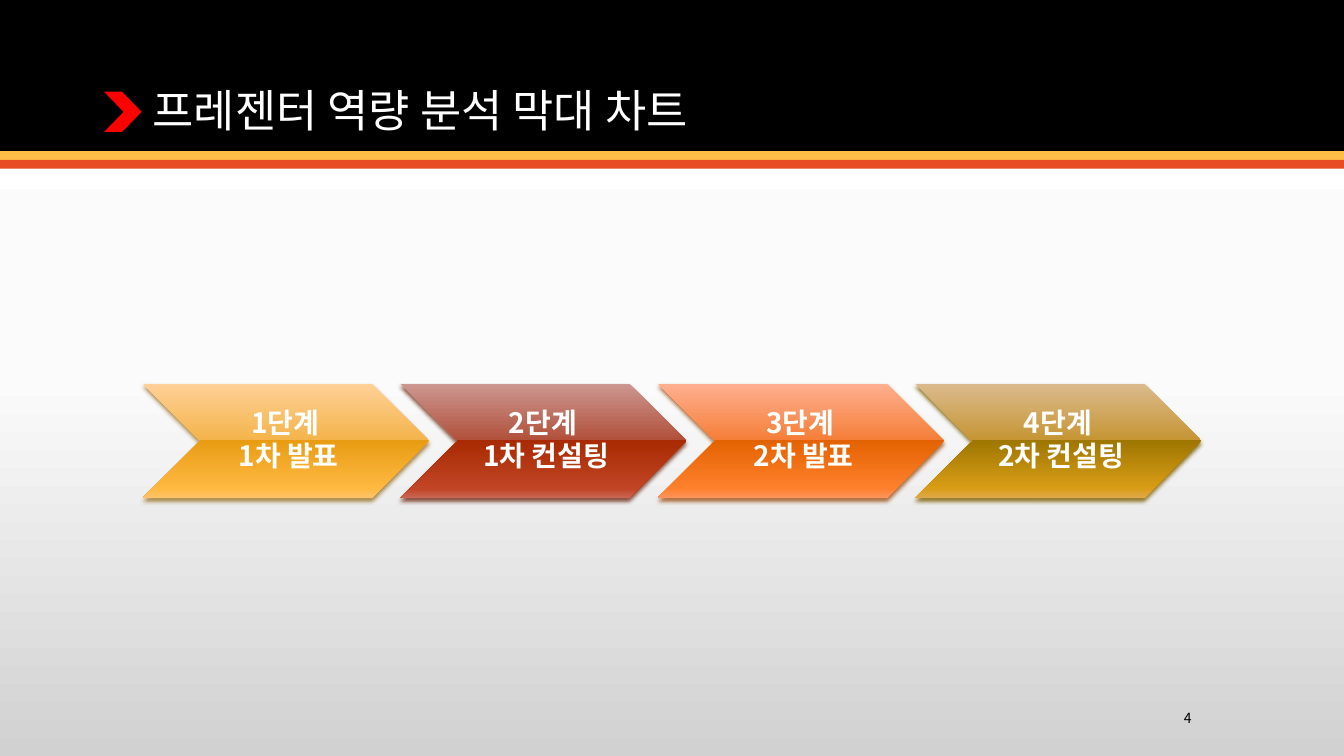
from lxml.etree import SubElement
from pptx import Presentation
from pptx.dml.color import RGBColor
from pptx.enum.shapes import MSO_SHAPE
from pptx.enum.text import MSO_ANCHOR, PP_ALIGN
from pptx.oxml.ns import qn
from pptx.util import Cm, Pt

# Content
TITLE = "프레젠터 역량 분석 막대 차트"
PAGE = "4"
STEPS = [
    ("amber", "1단계 ", "1차 발표"),
    ("brick", "2단계 ", "1차 컨설팅"),
    ("orange", "3단계 ", "2차 발표"),
    ("olive", "4단계 ", "2차 컨설팅"),
]

# Style
FONT = "Noto Sans CJK KR"
COLORS = {"black": "000000", "white": "FFFFFF", "yellow": "FFBD47",
          "vermilion": "E84C22", "red": "FF0000"}
BACKGROUND = {"stops": ["FFFFFF", "FBFBFB", "D1D1D1"], "at": [0, 50, 100]}
STEP_AT = [0, 49, 49, 92, 100]
STEP_COLORS = {
    "amber": ["FFD197", "F4B44C", "E89C13", "FFB942", "FFC36A"],
    "brick": ["CC9790", "B1513C", "A82A02", "C14526", "C96654"],
    "orange": ["FFAF90", "F57F39", "E36200", "FF802C", "FF945E"],
    "olive": ["DBBB8E", "C69534", "9D7600", "D99D17", "DFA94C"],
}
STEP_SHADOWS = {"amber": "9D752C", "brick": "702D17",
                "orange": "9D5218", "olive": "7E5E00"}

# Layout in centimetres
SLIDE_W, SLIDE_H = 33.87, 19.05
HEADER_H, STRIPE_H = 3.81, 0.22
STEP_X, STEP_Y, STEP_W, STEP_H = 3.6, 9.67, 7.21, 2.88
STEP_PITCH = 0.9 * STEP_W
NOTCH = STEP_H / 2


def set_gradient(fill, element, stops, positions):
    fill.gradient()
    fill.gradient_angle = 270
    gs_list = element.xpath(".//a:gsLst")[0]
    for gs in list(gs_list):
        gs_list.remove(gs)
    for color, position in zip(stops, positions):
        gs = SubElement(gs_list, qn("a:gs"), pos=str(position * 1000))
        SubElement(gs, qn("a:srgbClr"), val=color)


def add_shadow(sp, color):
    effects = sp._element.spPr.find(qn("a:effectLst"))
    shadow = SubElement(effects, qn("a:outerShdw"), blurRad=str(Pt(3.1)),
                        dist=str(Pt(2)), dir="5400000", rotWithShape="0")
    clr = SubElement(shadow, qn("a:srgbClr"), val=color)
    SubElement(clr, qn("a:alpha"), val="83000")


def add_shape(kind, x, y, w, h, color=None):
    sp = slide.shapes.add_shape(kind, Cm(x), Cm(y), Cm(w), Cm(h))
    sp.shadow.inherit = False
    sp.line.fill.background()
    if color:
        sp.fill.solid()
        sp.fill.fore_color.rgb = RGBColor.from_string(COLORS[color])
    return sp


def add_text(x, y, w, h, lines, size, color, anchor, align,
             bold=False, spacing=1.0, after=0):
    tf = slide.shapes.add_textbox(Cm(x), Cm(y), Cm(w), Cm(h)).text_frame
    tf.word_wrap = True
    tf.vertical_anchor = anchor
    for i, line in enumerate(lines):
        p = tf.add_paragraph() if i else tf.paragraphs[0]
        p.alignment = align
        p.line_spacing = spacing
        p.space_after = Pt(after)
        r = p.add_run()
        r.text = line
        r.font.name = FONT
        r.font.size = Pt(size)
        r.font.bold = bold
        r.font.color.rgb = RGBColor.from_string(COLORS[color])
        SubElement(r._r.get_or_add_rPr(), qn("a:ea"), typeface=FONT)
    return tf


prs = Presentation()
prs.slide_width, prs.slide_height = Cm(SLIDE_W), Cm(SLIDE_H)
slide = prs.slides.add_slide(prs.slide_layouts[6])
set_gradient(slide.background.fill, slide._element,
             BACKGROUND["stops"], BACKGROUND["at"])

# Header band and stripes
add_shape(MSO_SHAPE.RECTANGLE, 0, 0, SLIDE_W, HEADER_H, "black")
for i, color in enumerate(["yellow", "vermilion"]):
    add_shape(MSO_SHAPE.RECTANGLE, 0, HEADER_H + i * STRIPE_H,
              SLIDE_W, STRIPE_H, color)

# Title with its marker
add_text(STEP_X, 0.71, 26.67, 2.87, [TITLE], 32, "white",
         MSO_ANCHOR.BOTTOM, PP_ALIGN.LEFT, spacing=0.9)
marker = add_shape(MSO_SHAPE.CHEVRON, 2.57, 2.29, 1.03, 1.06, "red")
marker.line.color.rgb = RGBColor.from_string(COLORS["black"])
marker.line.width = Pt(1.04)

# Process steps
for i, (tone, *lines) in enumerate(STEPS):
    x = STEP_X + i * STEP_PITCH
    sp = add_shape(MSO_SHAPE.CHEVRON, x, STEP_Y, STEP_W, STEP_H)
    set_gradient(sp.fill, sp._element, STEP_COLORS[tone], STEP_AT)
    add_shadow(sp, STEP_SHADOWS[tone])
    tf = add_text(x + NOTCH, STEP_Y, STEP_W - 2 * NOTCH, STEP_H, lines, 20,
                  "white", MSO_ANCHOR.MIDDLE, PP_ALIGN.CENTER,
                  bold=True, spacing=0.9, after=2.5)
    tf.margin_left = Cm(0.22)
    tf.margin_right = tf.margin_top = tf.margin_bottom = Cm(0.08)

# Page number
add_text(26.47, 17.7, 3.81, 0.76, [PAGE], 10, "black",
         MSO_ANCHOR.MIDDLE, PP_ALIGN.RIGHT)

prs.save("out.pptx")
